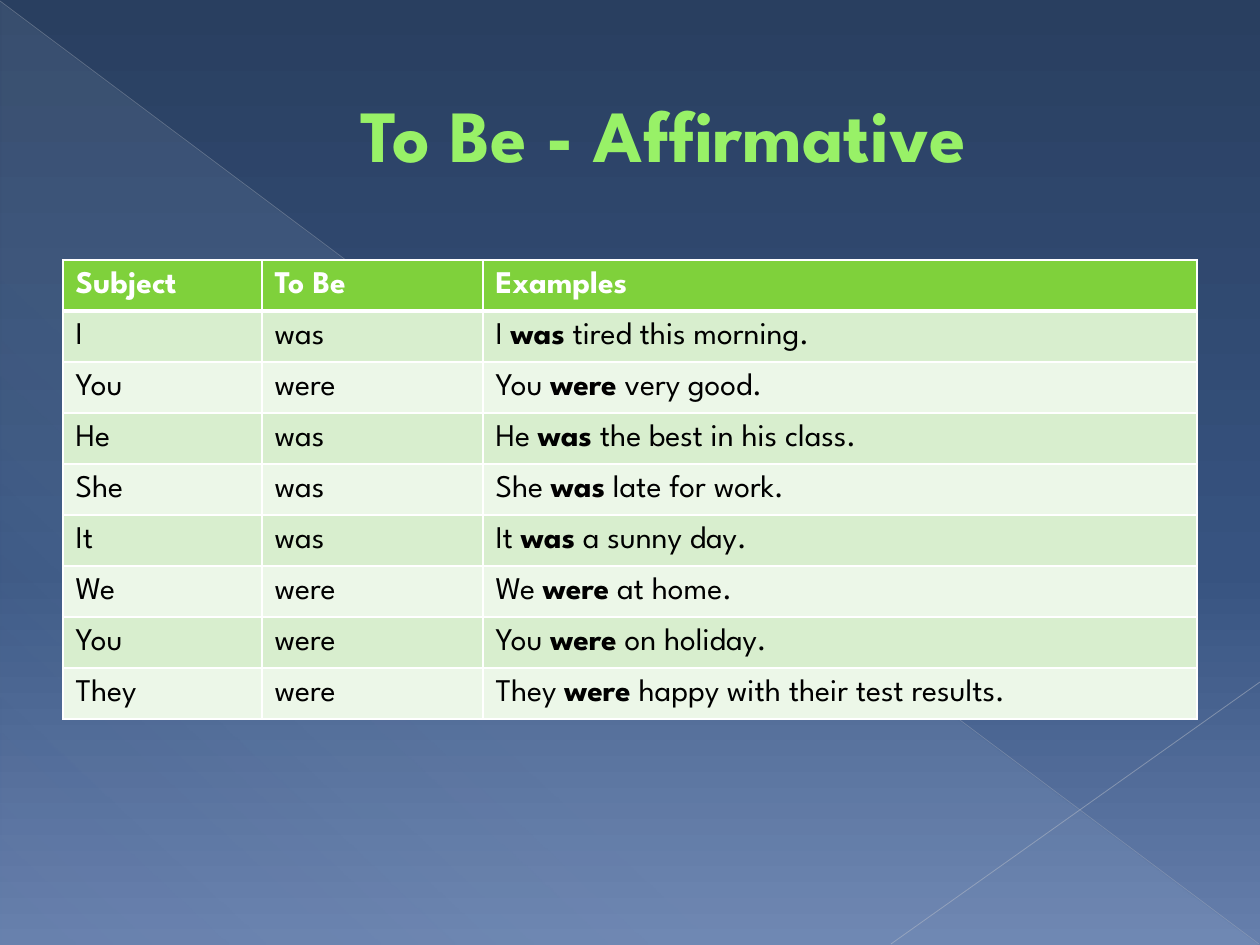
from dataclasses import dataclass

from lxml.etree import SubElement as Sub
from pptx import Presentation
from pptx.dml.color import RGBColor as Rgb
from pptx.enum.shapes import MSO_CONNECTOR as Link, MSO_SHAPE as Shape
from pptx.enum.text import MSO_ANCHOR as Anchor, PP_ALIGN as Align
from pptx.oxml.ns import qn
from pptx.util import Pt


@dataclass(frozen=True)
class Theme:
    font: str = "League Spartan"
    title_size: int = 42
    cell_size: int = 18
    title: str = "98F167"
    edge: str = "589129"
    head: str = "7FD13B"
    bands: tuple = ("D8EECE", "ECF7E8")
    white: str = "FFFFFF"
    ink: str = "000000"
    back: tuple = ((0, "293F60", 100), (60, "375380", 100), (100, "667FAC", 100))
    sheen: tuple = ((0, "D6ECFF", 10), (70, "D6ECFF", 8), (100, "D6ECFF", 1))


THEME = Theme()
WIDE, HIGH = 1260, 945
HEADS = ("Subject", "To Be", "Examples")
ROWS = (
    ("I", "was", "tired this morning."),
    ("You", "were", "very good."),
    ("He", "was", "the best in his class."),
    ("She", "was", "late for work."),
    ("It", "was", "a sunny day."),
    ("We", "were", "at home."),
    ("You", "were", "on holiday."),
    ("They", "were", "happy with their test results."),
)


def px(n):
    """Turn px, 126 to the inch, into EMU."""
    return round(n * 914400 / 126)


def tint(node, color, alpha=100):
    """Add a colour with an opacity in percent."""
    rgb = Sub(node, qn("a:srgbClr"), val=color)
    if alpha < 100:
        Sub(rgb, qn("a:alpha"), val=str(alpha * 1000))


def stroke(node, tag, color, width):
    line = Sub(node, qn(tag), w=str(Pt(width)))
    tint(Sub(line, qn("a:solidFill")), color)
    return line


def blend(fill, root, stops, angle):
    """Give the fill held under root a linear gradient."""
    fill.gradient()
    grad = root.find(".//" + qn("a:gradFill"))
    grad.find(qn("a:lin")).set("ang", str(angle * 60000))
    steps = grad.find(qn("a:gsLst"))
    for old in list(steps):
        steps.remove(old)
    for pos, color, alpha in stops:
        tint(Sub(steps, qn("a:gs"), pos=str(pos * 1000)), color, alpha)


def add_run(para, text, size, color, bold):
    run = para.add_run()
    run.text = text
    font = run.font
    font.name, font.size, font.bold = THEME.font, Pt(size), bold
    font.color.rgb = Rgb.from_string(color)
    return run


def add_line(slide, start, end, color, width, alpha):
    line = slide.shapes.add_connector(Link.STRAIGHT, *map(px, start + end))
    line.line.width = Pt(width)
    line.line.color.rgb = Rgb.from_string(color)
    props = line._element.spPr
    Sub(props.find(".//" + qn("a:srgbClr")), qn("a:alpha"), val=str(alpha * 1000))
    Sub(props, qn("a:effectLst"))


def draw_back(slide, x, y, w, h):
    blend(slide.background.fill, slide.element, THEME.back, 90)
    sheen = slide.shapes.add_shape(
        Shape.RIGHT_TRIANGLE, px(x + 1), px(y + 2), px(w - 2), px(h - 2))
    sheen.shadow.inherit = False
    sheen.line.fill.background()
    blend(sheen.fill, sheen._element, THEME.sheen, 133)
    add_line(slide, (x, y + 1), (x + w - 1, y + h - 1), "B7BCC5", 0.39, 35)
    add_line(slide, (x + w, y + 682), (x + 891, y + h - 1), "BFC3CB", 0.47, 45)


def draw_title(slide, x, y, w, h, text):
    frame = slide.shapes.add_textbox(px(x), px(y), px(w), px(h)).text_frame
    frame.word_wrap = True
    frame.vertical_anchor = Anchor.MIDDLE
    para = frame.paragraphs[0]
    para.alignment = Align.CENTER
    para._p.get_or_add_pPr().set("marL", str(px(67)))
    run = add_run(para, text, THEME.title_size, THEME.title, True)
    props = run._r.get_or_add_rPr()
    props.insert(0, stroke(props, "a:ln", THEME.edge, 0.5))


def fill_cell(cell, parts, fill, color, top, base):
    """Write (text, bold) parts into a cell with the given rule widths."""
    cell.vertical_anchor = Anchor.MIDDLE
    props = cell._tc.get_or_add_tcPr()
    for side, width in zip("LRTB", (1, 1, top, base)):
        stroke(props, "a:ln" + side, THEME.white, width)
    cell.fill.solid()
    cell.fill.fore_color.rgb = Rgb.from_string(fill)
    for text, bold in parts:
        add_run(cell.text_frame.paragraphs[0], text, THEME.cell_size, color, bold)


def draw_table(slide, x, y, cols, step):
    count = len(ROWS) + 1
    table = slide.shapes.add_table(
        count, len(cols), px(x), px(y), px(sum(cols)), px(step * count)).table
    for col, width in zip(table.columns, cols):
        col.width = px(width)
    for row in table.rows:
        row.height = px(step)
    for i, head in enumerate(HEADS):
        fill_cell(table.cell(0, i), [(head, True)], THEME.head, THEME.white, 1, 3)
    for r, (who, verb, rest) in enumerate(ROWS):
        cells = ([(who, False)], [(verb, False)],
                 [(who + " ", False), (verb, True), (" " + rest, False)])
        for i, parts in enumerate(cells):
            fill_cell(table.cell(r + 1, i), parts, THEME.bands[r % 2],
                      THEME.ink, 1 if r else 3, 1)


def main():
    deck = Presentation()
    deck.slide_width, deck.slide_height = px(WIDE), px(HIGH)
    slide = deck.slides.add_slide(deck.slide_layouts[6])
    draw_back(slide, 0, 0, WIDE, HIGH)
    draw_title(slide, 63, 37, 1134, 193, "To Be - Affirmative")
    draw_table(slide, 63, 260, (199, 221, 714), 51)
    deck.save("out.pptx")


if __name__ == "__main__":
    main()
